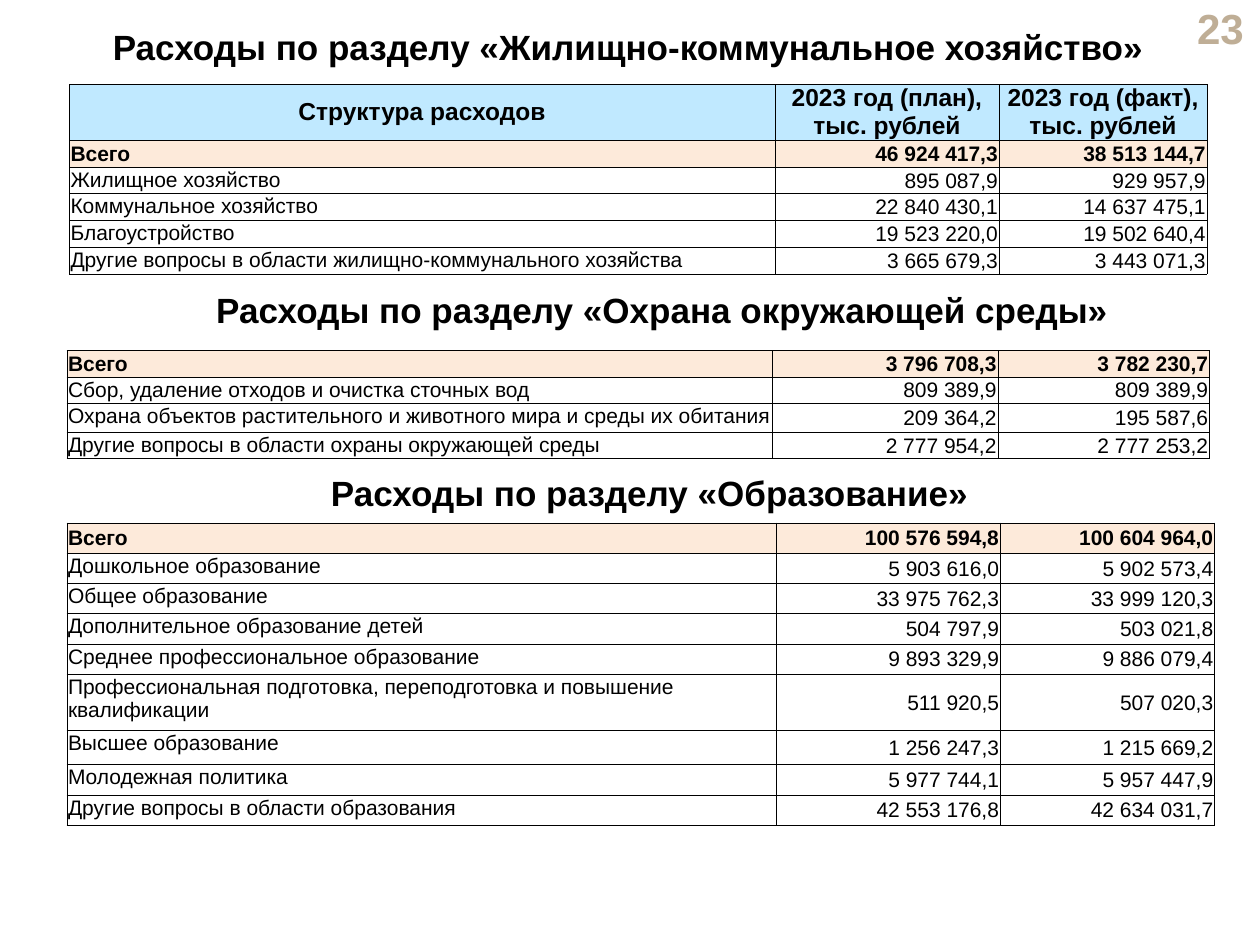
import pptx
import pptx.util
import pptx.dml.color
import pptx.enum.text
import pptx.oxml
import pptx.oxml.ns
from pptx.util import Inches

ALIGN = pptx.enum.text.PP_ALIGN
ANCHOR = pptx.enum.text.MSO_ANCHOR
COLORS = {"text": "000000", "number": "BFAE96", "header": "C0E9FF",
          "total": "FDEADA", "row": "FFFFFF", "border": "000000"}

PAGE_NUMBER = "23"
HEADER = ("Структура расходов", "2023 год (план),\vтыс. рублей", "2023 год (факт),\vтыс. рублей")

# Each section: heading and its box, table corner, column widths, row heights, rows
SECTIONS = [
    {"heading": "Расходы по разделу «Жилищно-коммунальное хозяйство»",
     "box": (0.56, 0.19, 8.85, 0.47), "corner": (0.55, 0.67),
     "columns": (5.6, 1.78, 1.65), "heights": [0.44] + [0.213] * 5,
     "rows": [
         HEADER,
         ("Всего", "46 924 417,3", "38 513 144,7"),
         ("Жилищное хозяйство", "895 087,9", "929 957,9"),
         ("Коммунальное хозяйство", "22 840 430,1", "14 637 475,1"),
         ("Благоустройство", "19 523 220,0", "19 502 640,4"),
         ("Другие вопросы в области жилищно-коммунального хозяйства", "3 665 679,3", "3 443 071,3"),
     ]},
    {"heading": "Расходы по разделу «Охрана окружающей среды»",
     "box": (0.61, 2.28, 9.29, 0.62), "corner": (0.53, 2.78),
     "columns": (5.6, 1.79, 1.68), "heights": [0.21, 0.21, 0.23, 0.21],
     "rows": [
         ("Всего", "3 796 708,3", "3 782 230,7"),
         ("Сбор, удаление отходов и очистка сточных вод", "809 389,9", "809 389,9"),
         ("Охрана объектов растительного и животного мира и среды их обитания",
          "209 364,2", "195 587,6"),
         ("Другие вопросы в области охраны окружающей среды", "2 777 954,2", "2 777 253,2"),
     ]},
    {"heading": "Расходы по разделу «Образование»",
     "box": (0.73, 3.73, 8.85, 0.62), "corner": (0.53, 4.15),
     "columns": (5.63, 1.78, 1.7), "heights": [0.24] * 5 + [0.45, 0.27, 0.24, 0.24],
     "rows": [
         ("Всего", "100 576 594,8", "100 604 964,0"),
         ("Дошкольное образование", "5 903 616,0", "5 902 573,4"),
         ("Общее образование", "33 975 762,3", "33 999 120,3"),
         ("Дополнительное образование детей", "504 797,9", "503 021,8"),
         ("Среднее профессиональное образование", "9 893 329,9", "9 886 079,4"),
         ("Профессиональная подготовка, переподготовка и повышение квалификации",
          "511 920,5", "507 020,3"),
         ("Высшее образование", "1 256 247,3", "1 215 669,2"),
         ("Молодежная политика", "5 977 744,1", "5 957 447,9"),
         ("Другие вопросы в области образования", "42 553 176,8", "42 634 031,7"),
     ]},
]


def write(frame, text, size, align, bold=True, color="text"):
    frame.text = text
    paragraph = frame.paragraphs[0]
    paragraph.alignment = align
    for run in paragraph.runs:
        run.font.name = "Arial"
        run.font.size = pptx.util.Pt(size)
        run.font.bold = bold
        run.font.color.rgb = pptx.dml.color.RGBColor.from_string(COLORS[color])
    return paragraph


def place(shape, box):
    shape.left, shape.top, shape.width, shape.height = map(Inches, box)
    shape.text_frame.word_wrap = True
    shape.text_frame.auto_size = pptx.enum.text.MSO_AUTO_SIZE.NONE


def add_borders(cell):
    properties = cell._tc.get_or_add_tcPr()
    for index, side in enumerate(("lnL", "lnR", "lnT", "lnB")):
        properties.insert(index, pptx.oxml.parse_xml(
            f'<a:{side} {pptx.oxml.ns.nsdecls("a")} w="3175"><a:solidFill>'
            f'<a:srgbClr val="{COLORS["border"]}"/></a:solidFill></a:{side}>'))


def format_cell(cell, text, kind, is_label):
    is_header = kind == "header"
    side = 0.04 if is_header else 0.01
    cell.margin_left = cell.margin_right = Inches(side)
    cell.margin_top = Inches(0 if is_header else 0.01)
    cell.margin_bottom = 0
    cell.vertical_anchor = ANCHOR.TOP if is_label and kind == "row" else ANCHOR.MIDDLE
    align = ALIGN.CENTER if is_header else ALIGN.LEFT if is_label else ALIGN.RIGHT
    write(cell.text_frame, text, 14 if is_header else 12, align, bold=kind != "row")
    cell.fill.solid()
    cell.fill.fore_color.rgb = pptx.dml.color.RGBColor.from_string(COLORS[kind])
    add_borders(cell)


def add_budget_table(slide, section):
    rows, columns, heights = section["rows"], section["columns"], section["heights"]
    table = slide.shapes.add_table(
        len(rows), len(columns), *map(Inches, section["corner"]),
        Inches(sum(columns)), Inches(sum(heights))).table
    table.first_row = table.horz_banding = False
    for column, width in zip(table.columns, columns):
        column.width = Inches(width)
    for r, (values, height) in enumerate(zip(rows, heights)):
        table.rows[r].height = Inches(height)
        kind = "header" if values is HEADER else "total" if values[0] == "Всего" else "row"
        for c, value in enumerate(values):
            format_cell(table.cell(r, c), value, kind, c == 0)


def main():
    deck = pptx.Presentation()
    deck.slide_width, deck.slide_height = Inches(10), Inches(7.5)
    slide = deck.slides.add_slide(deck.slide_layouts[5])

    # Page number
    number = slide.shapes.add_textbox(0, 0, 0, 0)
    place(number, (9.13, 0.05, 0.84, 0.34))
    number.text_frame.vertical_anchor = ANCHOR.MIDDLE
    write(number.text_frame, PAGE_NUMBER, 24, ALIGN.RIGHT, color="number")

    # Headings with their tables; the first heading is the slide title
    for index, section in enumerate(SECTIONS):
        heading = slide.shapes.add_textbox(0, 0, 0, 0) if index else slide.shapes.title
        place(heading, section["box"])
        heading.text_frame.vertical_anchor = ANCHOR.TOP
        write(heading.text_frame, section["heading"], 20, ALIGN.CENTER).line_spacing = 0.9
        add_budget_table(slide, section)

    deck.save("out.pptx")


if __name__ == "__main__":
    main()
